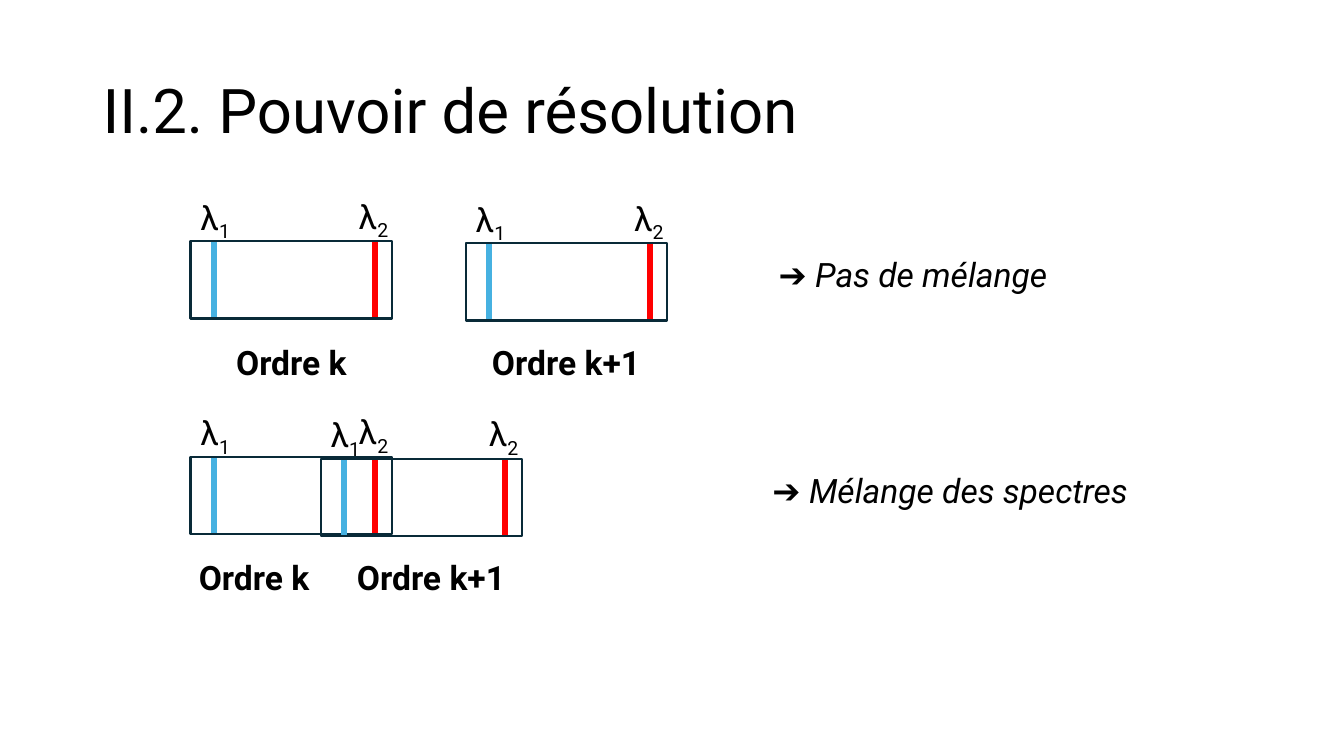
from pptx import Presentation
from pptx.dml.color import RGBColor
from pptx.enum.shapes import MSO_CONNECTOR, MSO_SHAPE
from pptx.enum.text import MSO_ANCHOR, PP_ALIGN
from pptx.oxml.ns import qn
from pptx.util import Inches, Pt
from lxml.etree import SubElement

# Content
TITLE = "II.2. Pouvoir de résolution"
FONT = "Roboto"
BLACK, BLUE, RED, FRAME = "000000", "46B1E1", "FF0000", "092A38"

# Each spectrum: frame left, frame top
# Each label: text, left, top, width, height
# Each conclusion: text, top, width
ROWS = [
    {
        "spectra": [(1.89, 2.39), (4.62, 2.41)],
        "labels": [("Ordre k", 1.89, 3.34, 2, 0.5),
                   ("Ordre k+1", 4.68, 3.34, 1.87, 0.9)],
        "conclusion": ("Pas de mélange", 2.47, 3.29),
    },
    {
        "spectra": [(1.89, 4.53), (3.18, 4.55)],
        "labels": [("Ordre k", 1.74, 5.48, 1.56, 0.9),
                   ("Ordre k+1", 3.34, 5.48, 1.87, 0.9)],
        "conclusion": ("Mélange des spectres", 4.61, 4.03),
    },
]

# Wavelengths: subscript, colour, line offset, symbol offset, symbol rise
WAVELENGTHS = [("1", BLUE, 0.23, 0, 0.49), ("2", RED, 1.83, 1.57, 0.5)]
FRAME_WIDTH, FRAME_HEIGHT = 2, 0.77
CONCLUSION_LEFT = 7.41


def color(hex_string):
    return RGBColor.from_string(hex_string)


def add_text(page, left, top, width, height, runs, size=24,
             align=PP_ALIGN.LEFT, anchor=MSO_ANCHOR.TOP):
    """Runs are pairs of text and style: "", "bold", "italic" or "subscript"."""
    box = page.shapes.add_textbox(
        Inches(left), Inches(top), Inches(width), Inches(height))
    frame = box.text_frame
    frame.word_wrap = True
    frame.vertical_anchor = anchor
    para = frame.paragraphs[0]
    para.alignment = align
    for text, style in runs:
        span = para.add_run()
        span.text = text
        span.font.name = FONT
        span.font.size = Pt(size)
        span.font.color.rgb = color(BLACK)
        if style == "bold":
            span.font.bold = True
        elif style == "italic":
            span.font.italic = True
        elif style == "subscript":
            span.font._element.set("baseline", "-25000")
    return para


def add_spectrum(page, left, top):
    # Spectral lines
    for _, line_color, offset, _, _ in WAVELENGTHS:
        x = Inches(left + offset)
        line = page.shapes.add_connector(
            MSO_CONNECTOR.STRAIGHT, x, Inches(top), x, Inches(top + FRAME_HEIGHT))
        line.line.color.rgb = color(line_color)
        line.line.width = Pt(4.5)
        SubElement(line._element.spPr, qn("a:effectLst"))

    # Frame
    frame = page.shapes.add_shape(
        MSO_SHAPE.RECTANGLE, Inches(left), Inches(top),
        Inches(FRAME_WIDTH), Inches(FRAME_HEIGHT))
    frame.shadow.inherit = False
    frame.fill.background()
    frame.line.color.rgb = color(FRAME)
    frame.line.width = Pt(1.5)

    # Wavelength symbols
    for number, _, _, offset, rise in WAVELENGTHS:
        add_text(page, left + offset, top - rise, 0.53, 0.55,
                 [("λ", ""), (number, "subscript")])


deck = Presentation()
deck.slide_width, deck.slide_height = Inches(13.33), Inches(7.5)
page = deck.slides.add_slide(deck.slide_layouts[6])

# Title
title = add_text(page, 0.92, 0.4, 11.5, 1.45, [(TITLE, "")], size=44,
                 anchor=MSO_ANCHOR.MIDDLE)
title.line_spacing = 0.9

# Rows of spectra with their conclusions
for row in ROWS:
    for left, top in row["spectra"]:
        add_spectrum(page, left, top)
    for text, left, top, width, height in row["labels"]:
        add_text(page, left, top, width, height, [(text, "bold")],
                 align=PP_ALIGN.CENTER)
    text, top, width = row["conclusion"]
    add_text(page, CONCLUSION_LEFT, top, width, 0.5,
             [("➔ ", ""), (text, "italic")], align=PP_ALIGN.CENTER)

deck.save("out.pptx")
